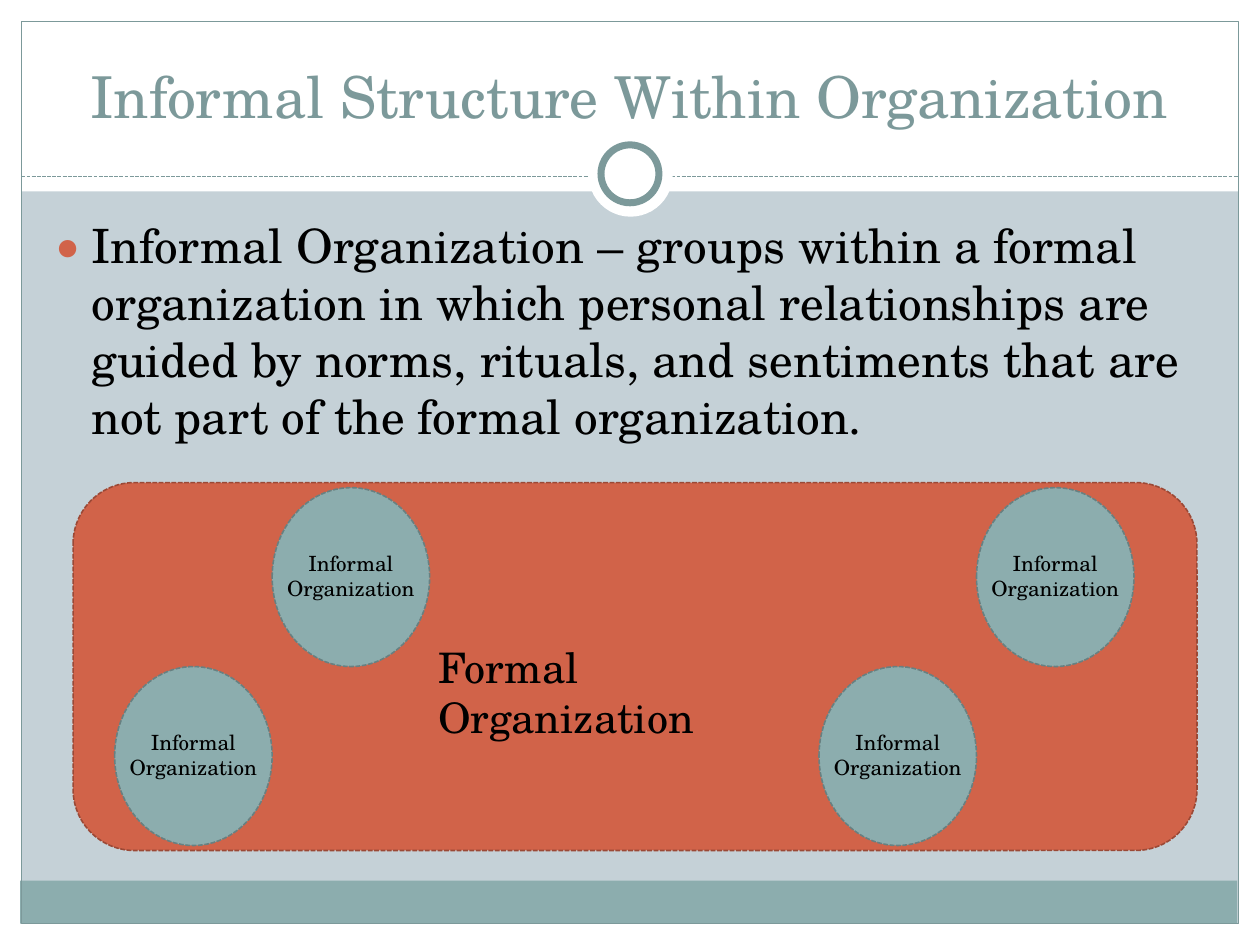
from lxml.etree import SubElement
from pptx import Presentation
from pptx.dml.color import RGBColor
from pptx.enum.dml import MSO_LINE
from pptx.enum.shapes import MSO_CONNECTOR, MSO_SHAPE
from pptx.enum.text import MSO_ANCHOR, PP_ALIGN
from pptx.oxml.ns import qn
from pptx.util import Inches, Pt

WHITE, BLACK = "FFFFFF", "000000"
BACKGROUND, TEAL, DARK_TEAL = "C5D1D7", "8CADAE", "7C999A"
OVAL_EDGE, RUST, RUST_EDGE = "688081", "D16349", "9B4936"


def color(value):
    return RGBColor.from_string(value)


class SlideBuilder:
    """Holds the style and the current slide."""

    font = "TeX Gyre Schola"

    def __init__(self, slide):
        self.slide = slide

    def background(self, fill):
        slide_fill = self.slide.background.fill
        slide_fill.solid()
        slide_fill.fore_color.rgb = color(fill)

    def group(self):
        return self.slide.shapes.add_group_shape()

    def outline(self, line, edge, width, dashed):
        line.color.rgb = color(edge)
        line.width = Pt(width)
        if dashed:
            line.dash_style = MSO_LINE.SQUARE_DOT

    def shape(self, kind, box, fill=None, edge=None, width=0.75, dashed=False, group=None):
        shapes = (group or self.slide).shapes
        shape = shapes.add_shape(kind, *map(Inches, box))
        shape.shadow.inherit = False
        if fill:
            shape.fill.solid()
            shape.fill.fore_color.rgb = color(fill)
        else:
            shape.fill.background()
        if edge:
            self.outline(shape.line, edge, width, dashed)
        else:
            shape.line.fill.background()
        return shape

    def line(self, start, end, edge):
        connector = self.slide.shapes.add_connector(
            MSO_CONNECTOR.STRAIGHT, *map(Inches, start + end))
        self.outline(connector.line, edge, 0.75, True)
        SubElement(connector._element.spPr, qn("a:effectLst"))

    def text(self, box, words, size, ink=BLACK, anchor=MSO_ANCHOR.TOP, group=None, **formats):
        shapes = (group or self.slide).shapes
        frame = shapes.add_textbox(*map(Inches, box)).text_frame
        frame.word_wrap = True
        frame.vertical_anchor = anchor
        paragraph = frame.paragraphs[0]
        for name, value in formats.items():
            setattr(paragraph, name, value)
        run = paragraph.add_run()
        run.text = words
        for name, value in {"name": self.font, "size": Pt(size)}.items():
            setattr(run.font, name, value)
        run.font.color.rgb = color(ink)
        return paragraph

    def bullet(self, paragraph, symbol, ink, percent, indent):
        properties = paragraph._p.get_or_add_pPr()
        properties.set("marL", str(Inches(indent)))
        properties.set("indent", str(-Inches(indent)))
        bullet_color = SubElement(properties, qn("a:buClr"))
        SubElement(bullet_color, qn("a:srgbClr"), val=ink)
        SubElement(properties, qn("a:buSzPct"), val=str(percent * 1000))
        SubElement(properties, qn("a:buFont"), typeface=self.font)
        SubElement(properties, qn("a:buChar"), char=symbol)


def main():
    presentation = Presentation()
    presentation.slide_width, presentation.slide_height = Inches(10), Inches(7.5)
    builder = SlideBuilder(presentation.slides.add_slide(presentation.slide_layouts[6]))
    builder.background(BACKGROUND)

    # White margins, footer band and frame
    margins = [(0, 7.33, 10, 0.17), (0, 0, 10, 1.52),
               (0, 0, 0.17, 7.5), (9.83, 0, 0.17, 7.5)]
    for margin in margins:
        builder.shape(MSO_SHAPE.RECTANGLE, margin, WHITE)
    builder.shape(MSO_SHAPE.RECTANGLE, (0.16, 6.99, 9.66, 0.34), TEAL)
    builder.shape(MSO_SHAPE.RECTANGLE, (0.17, 0.17, 9.66, 7.16), edge=DARK_TEAL)

    # Divider with ring
    builder.line((0.17, 1.4), (9.83, 1.4), DARK_TEAL)
    builder.shape(MSO_SHAPE.OVAL, (4.67, 1.05, 0.67, 0.67), WHITE)
    builder.shape(MSO_SHAPE.OVAL, (4.77, 1.15, 0.46, 0.46), WHITE, DARK_TEAL, 4)

    # Title and definition
    builder.text((0.33, 0.25, 9.33, 0.83), "Informal Structure Within Organization", 33,
                 DARK_TEAL, MSO_ANCHOR.BOTTOM, alignment=PP_ALIGN.CENTER)
    definition = builder.text(
        (0.33, 1.67, 9.3, 2),
        "Informal Organization – groups within a formal organization in which personal "
        "relationships are guided by norms, rituals, and sentiments that are not part of "
        "the formal organization.", 27, space_before=Pt(5.4))
    builder.bullet(definition, "●", RUST, 85, 0.3)

    # Formal organization
    formal = builder.group()
    builder.shape(MSO_SHAPE.ROUNDED_RECTANGLE, (0.58, 3.83, 8.92, 2.92),
                  RUST, RUST_EDGE, 0.9, True, formal)
    builder.text((3.38, 5.04, 3.33, 0.5), "Formal Organization", 24, group=formal)

    # Informal organizations: two diagonal pairs, each stepping up by one oval
    oval_width, oval_height = 1.25, 1.42
    for step in range(2):
        for pair_left in (0.91, 6.5):
            left = pair_left + step * oval_width
            top = 5.29 - step * oval_height
            informal = builder.group()
            builder.shape(MSO_SHAPE.OVAL, (left, top, oval_width, oval_height),
                          TEAL, OVAL_EDGE, 0.9, True, informal)
            builder.text((left, top + 0.45, oval_width, 0.5), "Informal Organization", 12,
                         group=informal, alignment=PP_ALIGN.CENTER)

    presentation.save("out.pptx")


if __name__ == "__main__":
    main()
